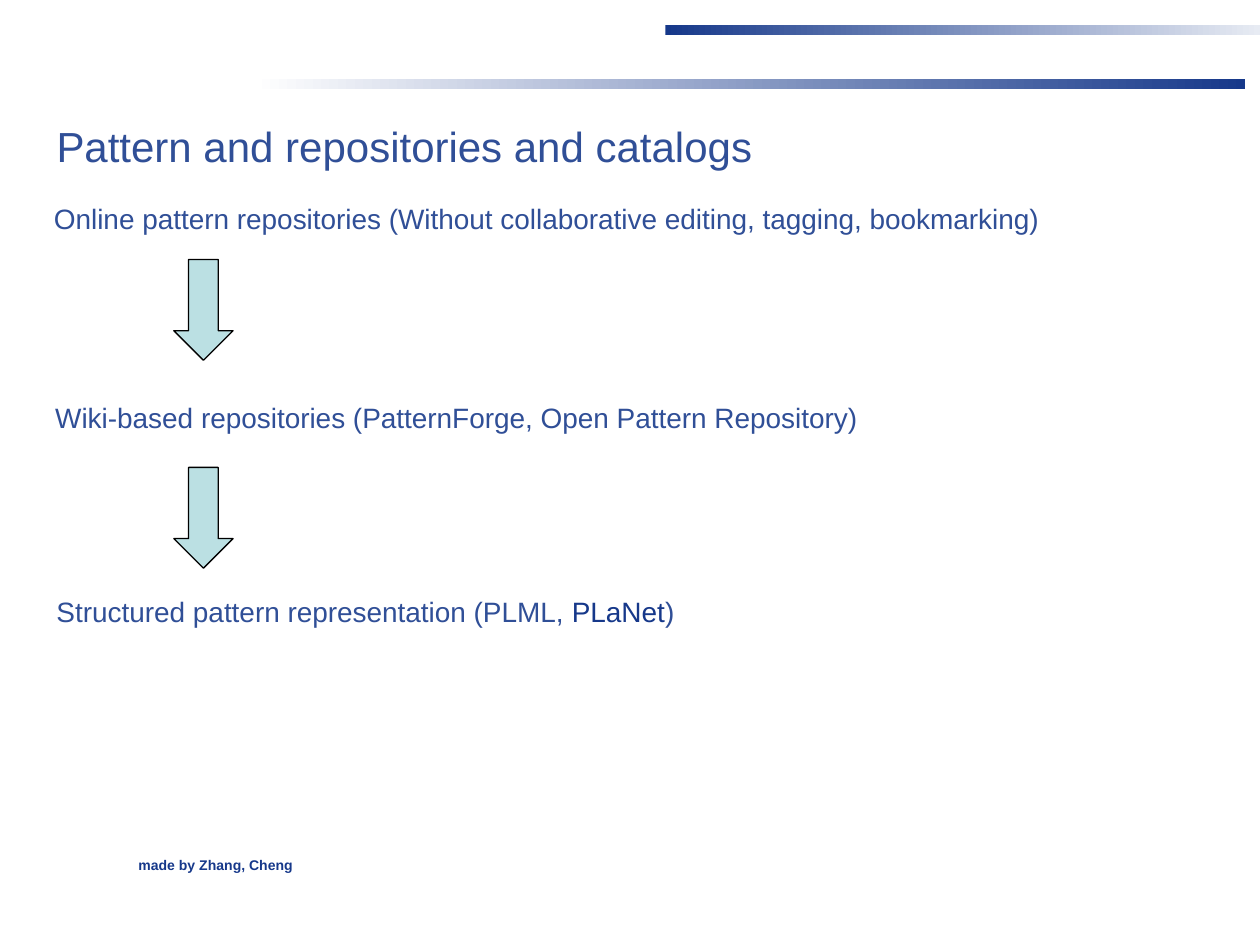
from pptx import Presentation
from pptx.dml.color import RGBColor
from pptx.enum.shapes import MSO_SHAPE
from pptx.util import Inches, Pt

COLORS = {
    "navy": "16388A",
    "blue": "304F97",
    "pale": "E7EBF3",
    "white": "FFFFFF",
    "aqua": "BBE0E3",
    "black": "000000",
}


def rgb(name):
    return RGBColor.from_string(COLORS[name])


def add_text(text, left, top, width, height, size=16, color="blue", bold=False,
             accent=None):
    """Add one line of text; the word given as accent is set in navy."""
    box = slide.shapes.add_textbox(Inches(left), Inches(top), Inches(width), Inches(height))
    box.text_frame.word_wrap = True
    paragraph = box.text_frame.paragraphs[0]
    before, word, after = text.partition(accent) if accent else (text, "", "")
    for part, part_color in ((before, color), (word, "navy"), (after, color)):
        if part:
            run = paragraph.add_run()
            run.text = part
            run.font.name = "Arial"
            run.font.size = Pt(size)
            run.font.bold = bold
            run.font.color.rgb = rgb(part_color)


prs = Presentation()
prs.slide_width, prs.slide_height = Inches(10), Inches(7.5)
slide = prs.slides.add_slide(prs.slide_layouts[6])

# Header bars
for left, top, width, start, end in (
    (2.01, 0.63, 7.87, "white", "navy"),
    (5.28, 0.2, 4.72, "navy", "pale"),
):
    bar = slide.shapes.add_shape(
        MSO_SHAPE.RECTANGLE, Inches(left), Inches(top), Inches(width), Inches(0.08))
    bar.shadow.inherit = False
    bar.line.fill.background()
    bar.fill.gradient()
    bar.fill.gradient_angle = 0
    for stop, color, position in zip(bar.fill.gradient_stops, (start, end), (0, 1)):
        stop.color.rgb = rgb(color)
        stop.position = position

add_text("made by Zhang, Cheng", 1, 6.75, 4.33, 0.5, size=8, color="navy", bold=True)
add_text("Pattern and repositories and catalogs", 0.35, 0.91, 9.65, 0.5, size=24)

# Stages of pattern repositories
for stage, left, top, accent in (
    ("Online pattern repositories (Without collaborative editing, tagging, bookmarking)",
     0.33, 1.55, None),
    ("Wiki-based repositories (PatternForge, Open Pattern Repository)", 0.34, 3.13, None),
    ("Structured pattern representation (PLML, PLaNet)", 0.35, 4.67, "PLaNet"),
):
    add_text(stage, left, top, 9.67, 0.37, accent=accent)

for top in (2.06, 3.71):
    arrow = slide.shapes.add_shape(
        MSO_SHAPE.DOWN_ARROW, Inches(1.38), Inches(top), Inches(0.47), Inches(0.8))
    arrow.shadow.inherit = False
    arrow.fill.solid()
    arrow.fill.fore_color.rgb = rgb("aqua")
    arrow.line.color.rgb = rgb("black")
    arrow.line.width = Pt(0.75)

prs.save("out.pptx")
